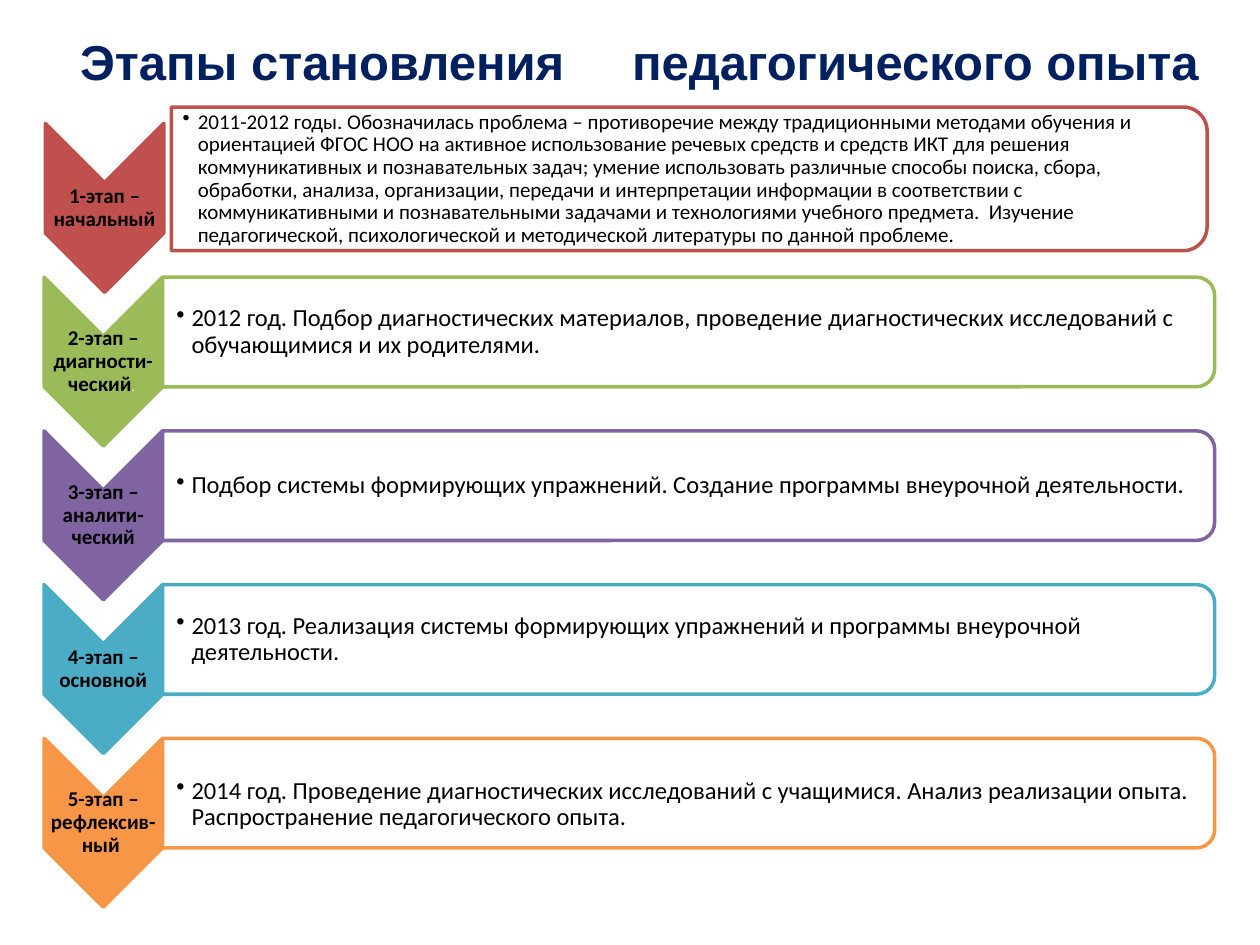
from dataclasses import dataclass

from lxml import etree
from pptx import Presentation
from pptx.dml.color import RGBColor
from pptx.enum import shapes, text
from pptx.oxml import ns
from pptx.util import Inches, Pt

NAVY = RGBColor(0x00, 0x20, 0x60)
BLACK = RGBColor(0x00, 0x00, 0x00)
WHITE = RGBColor(0xFF, 0xFF, 0xFF)
RED = RGBColor(0xC0, 0x50, 0x4D)
GREEN = RGBColor(0x9B, 0xBB, 0x59)
PURPLE = RGBColor(0x80, 0x64, 0xA2)
TEAL = RGBColor(0x4B, 0xAC, 0xC6)
ORANGE = RGBColor(0xF7, 0x96, 0x46)

STAGE_PITCH = 1.22
STAGE_TOP = 2.2


@dataclass
class Stage:
    color: RGBColor
    label: str
    description: str
    chevron_left: float = 0.35
    box_left: float = 1.29
    box_width: float = 8.35
    box_height: float = 0.87
    box_rise: float = 0
    chevron_rise: float = 0
    text_drop: float = 0
    text_inset: float = 0.11
    size: int = 14
    label_tail: str = ""


STAGES = [
    Stage(RED, "1-этап – начальный",
          "2011-2012 годы. Обозначилась проблема – противоречие между традиционными "
          "методами обучения и ориентацией ФГОС НОО на активное использование речевых "
          "средств и средств ИКТ для решения коммуникативных и познавательных задач; "
          "умение использовать различные способы поиска, сбора, обработки, анализа, "
          "организации, передачи и интерпретации информации в соответствии с "
          "коммуникативными и познавательными задачами и технологиями учебного "
          "предмета.  Изучение педагогической, психологической и методической "
          "литературы по данной проблеме.",
          chevron_left=0.36, box_left=1.36, box_width=8.22, box_height=1.14,
          box_rise=0.13, text_inset=0.09, size=12),
    Stage(GREEN, "2-этап – диагности-ческий",
          "2012 год. Подбор диагностических материалов, проведение диагностических "
          "исследований с обучающимися и их родителями.", label_tail=". "),
    Stage(PURPLE, "3-этап – аналити-ческий",
          "Подбор системы формирующих упражнений. Создание программы внеурочной "
          "деятельности."),
    Stage(TEAL, "4-этап – основной",
          "2013 год. Реализация системы формирующих упражнений и программы внеурочной "
          "деятельности."),
    Stage(ORANGE, "5-этап – рефлексив-ный ",
          "2014 год. Проведение диагностических исследований с учащимися. Анализ "
          "реализации опыта. Распространение педагогического опыта.", text_drop=0.09),
]


class StageSlide:
    title_font = "Arial"
    body_font = "Calibri"
    line_width = Pt(2)

    def __init__(self, presentation):
        self.slide = presentation.slides.add_slide(presentation.slide_layouts[5])

    def add_run(self, paragraph, words, size, color=BLACK, bold=False, font=body_font):
        run = paragraph.add_run()
        run.text = words
        run.font.name = font
        run.font.size = Pt(size)
        run.font.bold = bold
        run.font.color.rgb = color
        return run

    def add_title(self, first, second):
        title = self.slide.shapes.title
        title.left, title.top = Inches(0.43), Inches(0.13)
        title.width, title.height = Inches(9.29), Inches(0.71)
        title.text_frame.vertical_anchor = text.MSO_ANCHOR.MIDDLE
        paragraph = title.text_frame.paragraphs[0]
        paragraph.alignment = text.PP_ALIGN.CENTER
        style = (28, NAVY, True, self.title_font)
        self.add_run(paragraph, first, *style)
        gap = self.add_run(paragraph, " ", *style)
        gap.font._element.set("spc", "3100")
        self.add_run(paragraph, second, *style)

    def add_turned_shape(self, kind, left, top, width, height, fill, line):
        shift = (width - height) / 2
        shape = self.slide.shapes.add_shape(
            kind, Inches(left + shift), Inches(top - shift), Inches(height), Inches(width))
        shape.rotation = 90
        shape.shadow.inherit = False
        shape.fill.solid()
        shape.fill.fore_color.rgb = fill
        shape.line.color.rgb = line
        shape.line.width = self.line_width
        return shape

    def add_text(self, left, top, width, height, inset=0.01):
        frame = self.slide.shapes.add_textbox(
            Inches(left), Inches(top), Inches(width), Inches(height)).text_frame
        frame.word_wrap = True
        frame.vertical_anchor = text.MSO_ANCHOR.MIDDLE
        frame.margin_left = Inches(inset)
        frame.margin_right = frame.margin_top = frame.margin_bottom = Inches(0.01)
        paragraph = frame.paragraphs[0]
        paragraph.line_spacing = 0.9
        return paragraph

    def add_bullet(self, paragraph):
        properties = paragraph._p.get_or_add_pPr()
        properties.set("marL", str(Inches(0.12)))
        properties.set("indent", str(-Inches(0.12)))
        etree.SubElement(properties, ns.qn("a:buChar")).set("char", "•")

    def add_chevron(self, stage, top):
        self.add_turned_shape(shapes.MSO_SHAPE.CHEVRON, stage.chevron_left, top,
                              0.94, 1.34, stage.color, stage.color)
        label = self.add_text(stage.chevron_left, top + 0.47, 0.94, 0.4)
        label.alignment = text.PP_ALIGN.CENTER
        self.add_run(label, stage.label, 12, bold=True)
        if stage.label_tail:
            self.add_run(label, stage.label_tail, 8, WHITE)

    def add_description(self, stage, top):
        self.add_turned_shape(shapes.MSO_SHAPE.ROUND_2_SAME_RECTANGLE, stage.box_left, top,
                              stage.box_width, stage.box_height, WHITE, stage.color)
        paragraph = self.add_text(stage.box_left, top + 0.05 + stage.text_drop,
                                  stage.box_width - 0.04, stage.box_height - 0.1,
                                  stage.text_inset)
        self.add_bullet(paragraph)
        self.add_run(paragraph, stage.description, stage.size)

    def add_stage(self, stage, top):
        self.add_chevron(stage, top)
        self.add_description(stage, top - stage.box_rise)


def main():
    presentation = Presentation()
    presentation.slide_width, presentation.slide_height = Inches(10), Inches(7.5)
    stage_slide = StageSlide(presentation)
    stage_slide.add_title("Этапы становления", "педагогического опыта")
    for index, stage in enumerate(STAGES):
        stage_slide.add_stage(stage, STAGE_TOP + (index - 1) * STAGE_PITCH)
    presentation.save("out.pptx")


if __name__ == "__main__":
    main()
